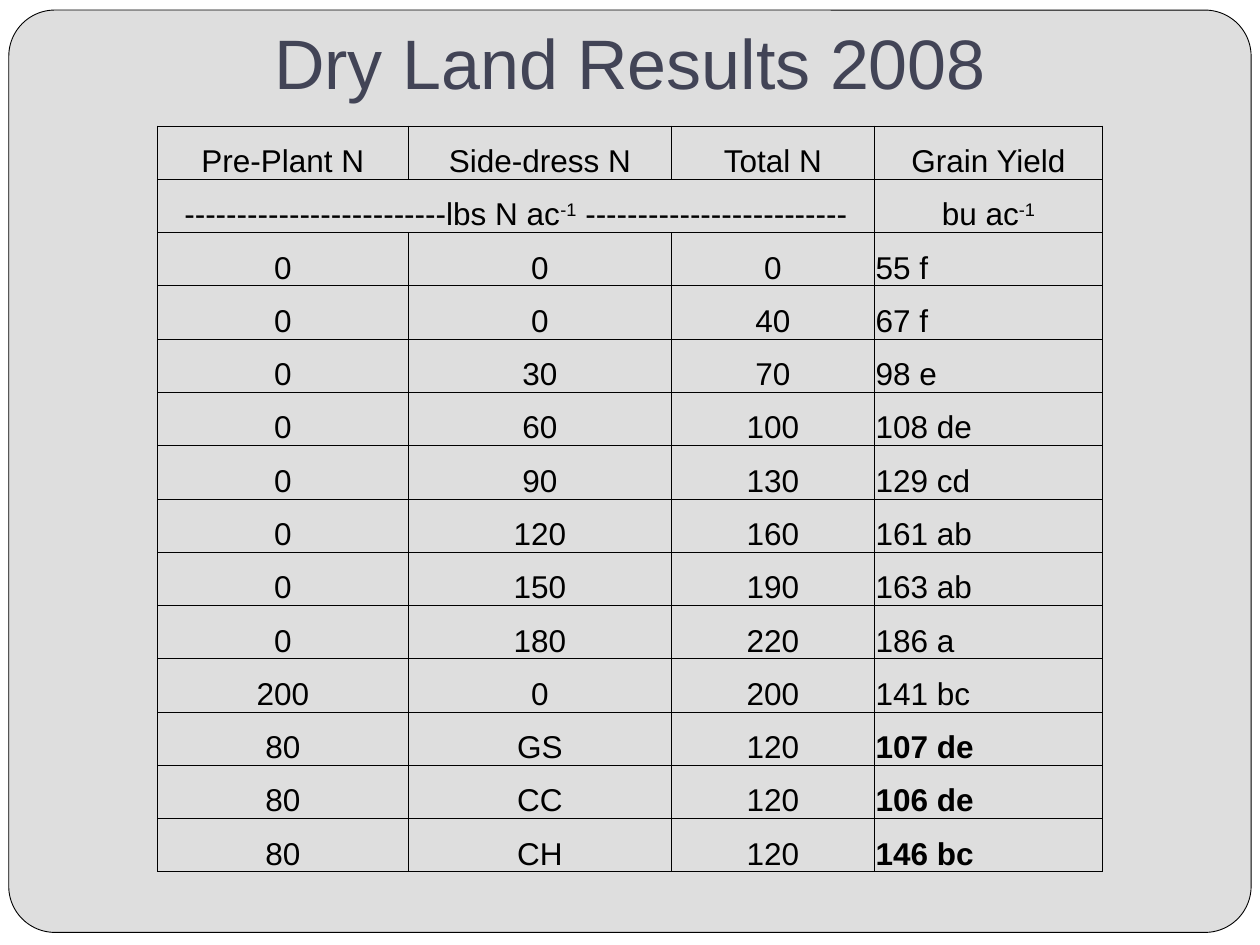
from lxml.etree import SubElement
from pptx import Presentation
from pptx.dml.color import RGBColor
from pptx.enum.shapes import MSO_SHAPE
from pptx.enum.text import MSO_ANCHOR, PP_ALIGN
from pptx.oxml.ns import qn
from pptx.util import Inches, Pt

COLORS = {"page": "FFFFFF", "panel": "DEDEDE", "title": "424456", "ink": "000000"}
FONT = "Arial"
COLUMN_WIDTHS = [1.99, 2.09, 1.61, 1.81]
TABLE_HEIGHT = 5.92
DASHES = "-" * 25
HEADINGS = ["Pre-Plant N", "Side-dress N", "Total N", "Grain Yield"]
RESULTS = [
    ("0", "0", "0", "55 f"),
    ("0", "0", "40", "67 f"),
    ("0", "30", "70", "98 e"),
    ("0", "60", "100", "108 de"),
    ("0", "90", "130", "129 cd"),
    ("0", "120", "160", "161 ab"),
    ("0", "150", "190", "163 ab"),
    ("0", "180", "220", "186 a"),
    ("200", "0", "200", "141 bc"),
    ("80", "GS", "120", "107 de"),
    ("80", "CC", "120", "106 de"),
    ("80", "CH", "120", "146 bc"),
]
SENSOR_TREATMENTS = ("GS", "CC", "CH")


def rgb(name):
    return RGBColor.from_string(COLORS[name])


def add_run(paragraph, text, size=18, color="ink", bold=False, superscript=False):
    run = paragraph.add_run()
    run.text = text
    run.font.name = FONT
    run.font.size = Pt(size)
    run.font.bold = bold
    run.font.color.rgb = rgb(color)
    if superscript:
        run.font._element.set("baseline", "30000")


def add_panel(slide):
    panel = slide.shapes.add_shape(
        MSO_SHAPE.ROUNDED_RECTANGLE, Inches(0.07), Inches(0.08), Inches(9.86), Inches(7.32))
    panel.adjustments[0] = 0.05
    panel.shadow.inherit = False
    panel.fill.solid()
    panel.fill.fore_color.rgb = rgb("panel")
    panel.line.color.rgb = rgb("ink")
    panel.line.width = Pt(0.5)


def add_title(slide, text):
    frame = slide.shapes.add_textbox(0, Inches(0.17), Inches(10), Inches(0.75)).text_frame
    frame.word_wrap = True
    frame.vertical_anchor = MSO_ANCHOR.BOTTOM
    frame.margin_bottom = Inches(0.1)
    paragraph = frame.paragraphs[0]
    paragraph.alignment = PP_ALIGN.CENTER
    add_run(paragraph, text, size=40, color="title")


def style_cell(cell):
    """Thin border on every side, no fill, text at the bottom."""
    properties = cell._tc.get_or_add_tcPr()
    for side in ("a:lnL", "a:lnR", "a:lnT", "a:lnB"):
        border = SubElement(properties, qn(side), w=str(Pt(0.5)))
        fill = SubElement(border, qn("a:solidFill"))
        SubElement(fill, qn("a:srgbClr"), val=COLORS["ink"])
    cell.fill.background()
    cell.vertical_anchor = MSO_ANCHOR.BOTTOM
    cell.margin_left = cell.margin_right = cell.margin_top = Inches(0.01)
    cell.margin_bottom = 0


def write_cell(cell, text, align=PP_ALIGN.CENTER, bold=False):
    paragraph = cell.text_frame.paragraphs[0]
    paragraph.alignment = align
    add_run(paragraph, text, bold=bold)
    return paragraph


def write_per_acre(cell, before, after=""):
    paragraph = write_cell(cell, before + " ac")
    add_run(paragraph, "-1", superscript=True)
    if after:
        add_run(paragraph, after)


def add_results_table(slide):
    row_count = len(RESULTS) + 2
    frame = slide.shapes.add_table(
        row_count, len(HEADINGS), Inches(1.25), Inches(1),
        Inches(sum(COLUMN_WIDTHS)), Inches(TABLE_HEIGHT))
    table = frame.table
    table.first_row = table.horz_banding = False
    for column, width in zip(table.columns, COLUMN_WIDTHS):
        column.width = Inches(width)
    for row in table.rows:
        row.height = Inches(TABLE_HEIGHT / row_count)
    for cell in table.iter_cells():
        style_cell(cell)

    for c, heading in enumerate(HEADINGS):
        write_cell(table.cell(0, c), heading)
    table.cell(1, 0).merge(table.cell(1, 2))
    write_per_acre(table.cell(1, 0), DASHES + "lbs N", " " + DASHES)
    write_per_acre(table.cell(1, 3), "bu")
    for r, (*rates, grain_yield) in enumerate(RESULTS, start=2):
        for c, rate in enumerate(rates):
            write_cell(table.cell(r, c), rate)
        write_cell(table.cell(r, 3), grain_yield, PP_ALIGN.LEFT,
                   bold=rates[1] in SENSOR_TREATMENTS)


def main():
    prs = Presentation()
    prs.slide_width, prs.slide_height = Inches(10), Inches(7.5)
    slide = prs.slides.add_slide(prs.slide_layouts[6])
    slide.background.fill.solid()
    slide.background.fill.fore_color.rgb = rgb("page")
    add_panel(slide)
    add_title(slide, "Dry Land Results 2008")
    add_results_table(slide)
    prs.save("out.pptx")


if __name__ == "__main__":
    main()
